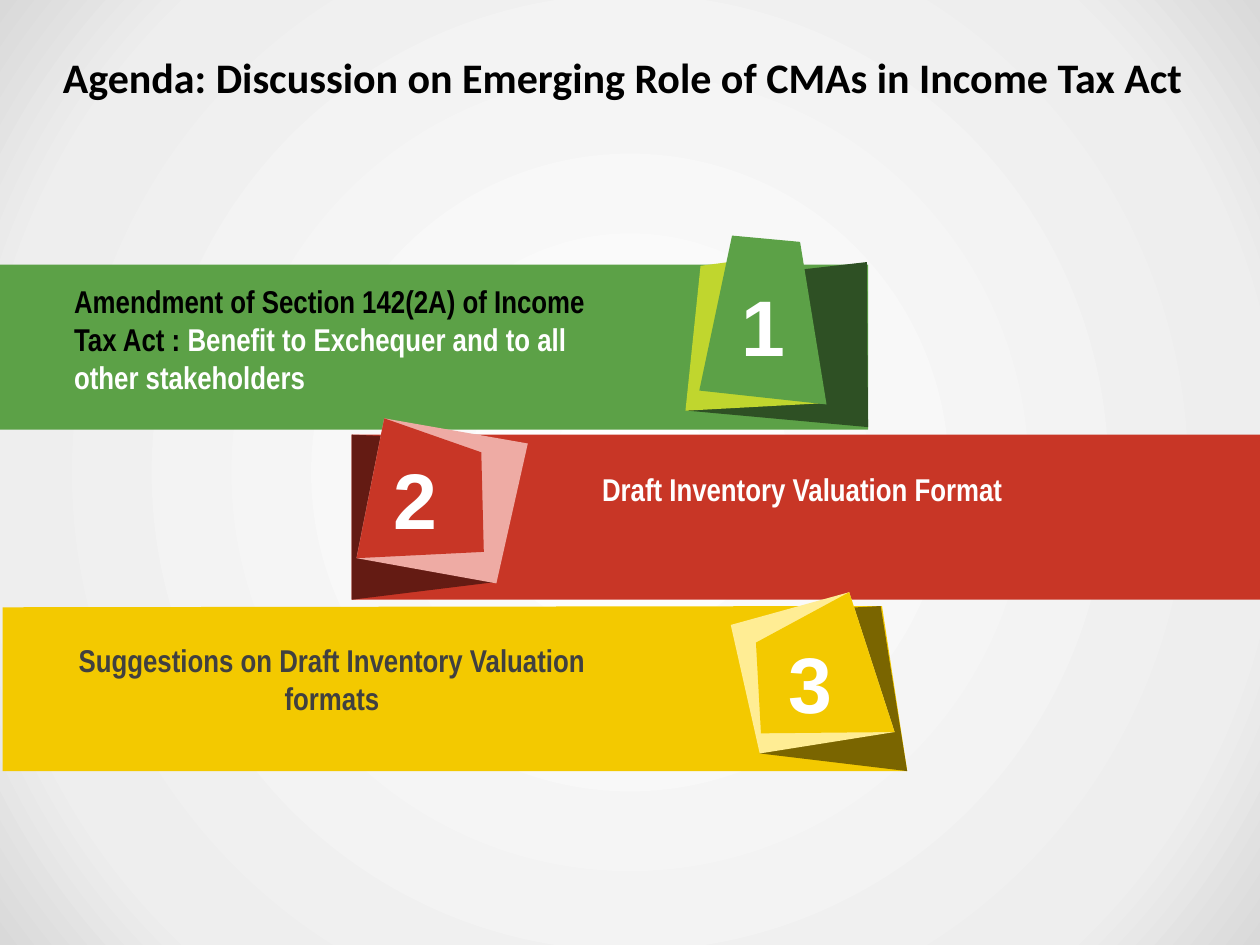
"""Build an agenda slide with three folded-paper banners on a 100 x 75 cell grid."""
from dataclasses import dataclass

from lxml.etree import SubElement
from pptx import Presentation
from pptx.dml.color import RGBColor
from pptx.enum.shapes import MSO_SHAPE
from pptx.enum.text import MSO_ANCHOR as ANCHOR, PP_ALIGN as ALIGN
from pptx.oxml.ns import qn
from pptx.util import Inches, Pt

COLS, ROWS = 100, 75
CELL = Inches(0.1)
DEFAULT_INSETS = (1, 0.5, 1, 0.5)
COLORS = {
    "green": "5CA147", "dark green": "2E5024", "lime": "C0D62E",
    "red": "C83626", "dark red": "641B13", "pink": "EEABA4",
    "yellow": "F3C900", "olive": "7A6500", "cream": "FFED94",
    "black": "000000", "grey": "404040", "white": "FFFFFF",
}
BACKDROP = {0: "FFFFFF", 81: "EEEEEE", 100: "D9D9D9"}

Points = list[tuple[float, float]]
Box = tuple[float, float, float, float]


@dataclass
class Facet:
    color: str
    points: Points


@dataclass
class Label:
    box: Box
    runs: list[tuple[str, str]]
    font: str = "Arial Narrow"
    size: int = 18
    align: ALIGN = ALIGN.LEFT
    anchor: ANCHOR = ANCHOR.TOP
    insets: Box = DEFAULT_INSETS


@dataclass
class Banner:
    bar: Box | Points
    facets: list[Facet]
    insets: Box
    label: Label


TITLE = Label((5, 3, 90, 6.2),
              [("Agenda: Discussion on Emerging Role of CMAs in Income Tax Act", "black")],
              "Calibri", 24, anchor=ANCHOR.MIDDLE, insets=(0, 0.7, 0, 0.7))

BANNERS = [
    Banner((0, 21, 68.9, 13.1), [
        Facet("dark green", [(68.8, 20.8), (68.9, 33.9), (54.6, 32.6), (57.1, 25.6), (58.3, 22)]),
        Facet("lime", [(61.7, 20.3), (62.7, 22), (65.5, 32), (54.4, 32.6), (55.6, 21.1)]),
        Facet("green", [(58.1, 18.7), (63.5, 19.2), (65.6, 32.1), (55.5, 31)]),
    ], (1.5, 2.3, 1.5, 1.5), Label((4.9, 21.9, 42.7, 13.1), [
        ("Amendment of Section 142(2A) of Income Tax Act : ", "black"),
        ("Benefit to Exchequer and to all other stakeholders", "white")])),
    Banner((27.9, 34.5, 72.1, 13.1), [
        Facet("dark red", [(27.9, 34.5), (27.9, 47.6), (39.3, 46.2), (37, 37.5), (35.8, 34.8)]),
        Facet("pink", [(30.5, 33.2), (28.3, 44.3), (39.4, 46.3), (41.9, 35.2)]),
        Facet("red", [(30.5, 33.2), (28.3, 44.3), (38.4, 43.8), (38.2, 35.9)]),
    ], (1.5, 3, 2.3, 1.5), Label((46.8, 36.8, 42.7, 4), [
        ("Draft Inventory Valuation Format", "white")])),
    Banner([(0.2, 48.2), (70, 48.1), (72, 61.2), (0.2, 61.2)], [
        Facet("olive", [(69.9, 48.1), (72, 61.2), (60.3, 59.8), (63.2, 50.9), (64.3, 48.4)]),
        Facet("cream", [(67.4, 47), (71, 58.1), (60.3, 59.8), (58, 49.6)]),
        Facet("yellow", [(67.4, 47), (71, 58.1), (60.4, 58.2), (60, 51)]),
    ], (1.5, 4.5, 3.8, 1.5), Label((5, 50.4, 42.7, 7.1), [
        ("Suggestions on Draft Inventory Valuation formats", "grey")], align=ALIGN.CENTER)),
]


def cells(values) -> list[int]:
    return [round(v * CELL) for v in values]


def paint(sp, color: str) -> None:
    sp.shadow.inherit = False
    sp.fill.solid()
    sp.fill.fore_color.rgb = RGBColor.from_string(COLORS[color])
    sp.line.fill.background()


def add_polygon(s, facet: Facet):
    start, *rest = [cells(point) for point in facet.points]
    builder = s.shapes.build_freeform(*start)
    builder.add_line_segments(rest)
    sp = builder.convert_to_shape()
    paint(sp, facet.color)
    return sp


def write(sp, label: Label) -> None:
    tf = sp.text_frame
    tf.word_wrap = True
    tf.vertical_anchor = label.anchor
    tf.margin_left, tf.margin_top, tf.margin_right, tf.margin_bottom = cells(label.insets)
    p = tf.paragraphs[0]
    p.alignment = label.align
    p.font.name, p.font.size, p.font.bold = label.font, Pt(label.size), True
    for text, color in label.runs:
        r = p.add_run()
        r.text = text
        r.font.color.rgb = RGBColor.from_string(COLORS[color])


def add_label(s, label: Label) -> None:
    write(s.shapes.add_textbox(*cells(label.box)), label)


def add_banner(s, banner: Banner, number: int) -> None:
    color = banner.facets[-1].color
    if isinstance(banner.bar, tuple):
        paint(s.shapes.add_shape(MSO_SHAPE.RECTANGLE, *cells(banner.bar)), color)
    else:
        add_polygon(s, Facet(color, banner.bar))
    *_, front = [add_polygon(s, facet) for facet in banner.facets]
    write(front, Label((0, 0, 0, 0), [(str(number), "white")], "Arial", 45,
                       ALIGN.CENTER, ANCHOR.MIDDLE, banner.insets))
    add_label(s, banner.label)


def set_backdrop(s) -> None:
    s.background.fill.gradient()
    grad = next(s.element.iter(qn("a:gradFill")))
    for child in list(grad):
        grad.remove(child)
    stops = SubElement(grad, qn("a:gsLst"))
    for share, color in BACKDROP.items():
        stop = SubElement(stops, qn("a:gs"), pos=str(share * 1000))
        SubElement(stop, qn("a:srgbClr"), val=color)
    circle = SubElement(grad, qn("a:path"), {"path": "circle"})
    SubElement(circle, qn("a:fillToRect"), dict.fromkeys("ltrb", "50000"))


def main() -> None:
    prs = Presentation()
    prs.slide_width, prs.slide_height = COLS * CELL, ROWS * CELL
    s = prs.slides.add_slide(prs.slide_layouts[6])
    set_backdrop(s)
    add_label(s, TITLE)
    for number, banner in enumerate(BANNERS, 1):
        add_banner(s, banner, number)
    prs.save("out.pptx")


if __name__ == "__main__":
    main()
